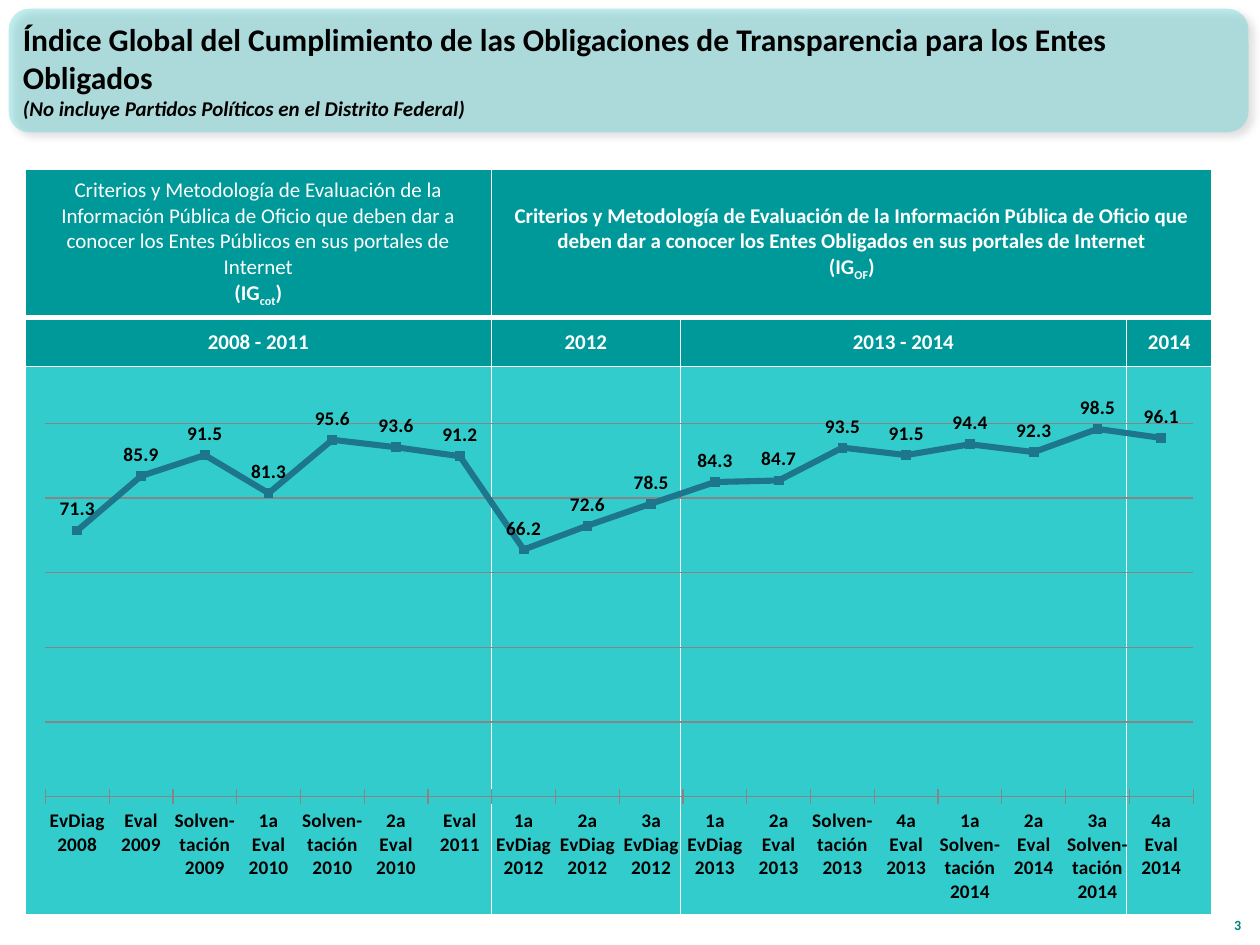
import pptx
import pptx.chart.data
import pptx.dml.color
import pptx.enum.chart
import pptx.enum.shapes
import pptx.enum.text
import pptx.oxml
import pptx.oxml.ns
import pptx.util

Pt = pptx.util.Pt
RGB = pptx.dml.color.RGBColor
Align = pptx.enum.text.PP_ALIGN
Anchor = pptx.enum.text.MSO_ANCHOR
qn = pptx.oxml.ns.qn

BLACK = RGB(0, 0, 0)
WHITE = RGB(255, 255, 255)
AQUA = RGB(0x33, 0xCC, 0xCC)
TEAL = RGB(0, 0x99, 0x99)
DEEP = RGB(0, 0x80, 0x80)
BLUE = RGB(0x1E, 0x76, 0x8C)
GRAY = RGB(0x86, 0x86, 0x86)

HEADS = [
    ("Criterios y Metodología de Evaluación de la Información Pública de Oficio "
     "que deben dar a conocer los Entes Públicos en sus portales de Internet", "cot", False),
    ("Criterios y Metodología de Evaluación de la Información Pública de Oficio "
     "que deben dar a conocer los Entes Obligados en sus portales de Internet", "OF", True),
]
SPANS = ["2008 - 2011", "2012", "2013 - 2014", "2014"]
WIDTHS = [266.4, 108, 254.9, 49]
HEIGHTS = [85, 28.1, 313.2]
SCORES = [
    ("EvDiag\n2008", 71.3), ("Eval\n2009", 85.9), ("Solven-\ntación\n2009", 91.5),
    ("1a\nEval\n2010", 81.3), ("Solven-\ntación\n2010", 95.6), ("2a\nEval\n2010", 93.6),
    ("Eval\n2011", 91.2), ("1a\nEvDiag\n2012", 66.2), ("2a\nEvDiag\n2012", 72.6),
    ("3a\nEvDiag\n2012", 78.5), ("1a\nEvDiag\n2013", 84.3), ("2a\nEval\n2013", 84.7),
    ("Solven-\ntación\n2013", 93.5), ("4a\nEval\n2013", 91.5),
    ("1a\nSolven-\ntación\n2014", 94.4), ("2a\nEval\n2014", 92.3),
    ("3a\nSolven-\ntación\n2014", 98.5), ("4a\nEval\n2014", 96.1),
]


def style(font, color, **form):
    for key, val in {"name": "Calibri", "bold": True, **form}.items():
        setattr(font, key, val)
    font.fill.solid()
    font.fill.fore_color.rgb = color


def add_run(para, text, color, **form):
    run = para.add_run()
    run.text = text
    style(run.font, color, **form)
    return run


def place(shape, left, top, width, height):
    box = {"left": left, "top": top, "width": width, "height": height}
    for key, val in box.items():
        setattr(shape, key, Pt(val))


def paint(fill, color, alpha=100):
    """Fill with a solid colour at alpha percent opacity."""
    fill.solid()
    fill.fore_color.rgb = color
    if alpha < 100:
        tint = fill._xPr.find(".//" + qn("a:srgbClr"))
        tint.append(pptx.oxml.parse_xml(
            f'<a:alpha {pptx.oxml.ns.nsdecls("a")} val="{alpha * 1000}"/>'))


def add_band(slide):
    band = slide.shapes.add_shape(
        pptx.enum.shapes.MSO_SHAPE.ROUNDED_RECTANGLE, Pt(5), Pt(5), Pt(708.5), Pt(70.6))
    paint(band.fill, AQUA, 30)
    band.line.fill.background()
    band._element.spPr.append(pptx.oxml.parse_xml(
        f'<a:effectLst {pptx.oxml.ns.nsdecls("a")}>'
        '<a:outerShdw blurRad="50800" dist="38100" dir="2700000" algn="tl" rotWithShape="0">'
        '<a:srgbClr val="000000"><a:alpha val="40000"/></a:srgbClr>'
        '</a:outerShdw></a:effectLst>'))
    slide.shapes._spTree.insert(2, band._element)


def set_title(slide):
    title = slide.shapes.title
    place(title, 5.8, 6.5, 666, 67.7)
    frame = title.text_frame
    frame.auto_size = pptx.enum.text.MSO_AUTO_SIZE.NONE
    frame.vertical_anchor = Anchor.MIDDLE
    lead, note = frame.paragraphs[0], frame.add_paragraph()
    add_run(lead, "Índice Global del Cumplimiento de las Obligaciones de "
            "Transparencia para los Entes Obligados", BLACK, size=Pt(18))
    add_run(note, "(No incluye Partidos Políticos en el Distrito Federal)",
            BLACK, size=Pt(12), italic=True)
    for para in (lead, note):
        para.alignment = Align.LEFT


def add_number(slide):
    frame = slide.shapes.add_textbox(Pt(687.6), Pt(508.3), Pt(28.8), Pt(28.8)).text_frame
    frame.word_wrap = True
    frame.vertical_anchor = Anchor.BOTTOM
    para = frame.paragraphs[0]
    para.alignment = Align.RIGHT
    add_run(para, "3", DEEP, size=Pt(8))


def edge(cell, base):
    """Draw white borders; base is the width of the bottom one."""
    props = cell._tc.get_or_add_tcPr()
    for side, width in zip("LRTB", (1, 1, 1, base)):
        props.append(pptx.oxml.parse_xml(
            f'<a:ln{side} {pptx.oxml.ns.nsdecls("a")} w="{width * 12700}">'
            f'<a:solidFill><a:srgbClr val="{WHITE}"/></a:solidFill></a:ln{side}>'))


def add_grid(slide):
    grid = slide.shapes.add_table(
        3, 4, Pt(14.4), Pt(96.5), Pt(sum(WIDTHS)), Pt(sum(HEIGHTS))).table
    for col, width in zip(grid.columns, WIDTHS):
        col.width = Pt(width)
    for i, (row, height) in enumerate(zip(grid.rows, HEIGHTS)):
        row.height = Pt(height)
        for cell in row.cells:
            edge(cell, 3 if i == 0 else 1)
            paint(cell.fill, *((AQUA, 25) if i == 2 else (TEAL,)))
            cell.vertical_anchor = Anchor.MIDDLE
            cell.text_frame.paragraphs[0].alignment = Align.CENTER
    grid.cell(0, 1).merge(grid.cell(0, 3))
    for i, (text, sub, bold) in enumerate(HEADS):
        frame = grid.cell(0, i).text_frame
        add_run(frame.paragraphs[0], text, WHITE, size=Pt(12), bold=bold)
        para = frame.add_paragraph()
        para.alignment = Align.CENTER
        add_run(para, "(IG", WHITE, size=Pt(12))
        low = add_run(para, sub, WHITE, size=Pt(12))
        low.font._element.set("baseline", "-25000")
        add_run(para, ")", WHITE, size=Pt(12))
    for i, text in enumerate(SPANS):
        add_run(grid.cell(1, i).text_frame.paragraphs[0], text, WHITE, size=Pt(12))


def set_plot(chart, **box):
    """Fix the inner plot area, in fractions of the chart."""
    area = chart._chartSpace.chart.plotArea
    for old in area.findall(qn("c:layout")):
        area.remove(old)
    modes = '<c:xMode val="edge"/><c:yMode val="edge"/>'
    sizes = "".join(f'<c:{key} val="{val}"/>' for key, val in box.items())
    area.insert(0, pptx.oxml.parse_xml(
        f'<c:layout {pptx.oxml.ns.nsdecls("c")}><c:manualLayout>'
        f'<c:layoutTarget val="inner"/>{modes}{sizes}</c:manualLayout></c:layout>'))


def add_lines(slide):
    enum = pptx.enum.chart
    data = pptx.chart.data.CategoryChartData(number_format="0.0")
    data.categories = [name for name, _ in SCORES]
    data.add_series("Series 1", [val for _, val in SCORES])
    chart = slide.shapes.add_chart(
        enum.XL_CHART_TYPE.LINE_MARKERS, Pt(14.4), Pt(218.9), Pt(680.4), Pt(300.2), data).chart
    chart.has_title = chart.has_legend = False
    style(chart.font, BLACK, size=Pt(11))
    set_plot(chart, x=0.017, y=0.077, w=0.964, h=0.711)

    axis = chart.value_axis
    form = {"minimum_scale": 0, "maximum_scale": 100, "major_unit": 20,
            "has_major_gridlines": True, "visible": False}
    for key, val in form.items():
        setattr(axis, key, val)
    base = chart.category_axis
    base.major_tick_mark = enum.XL_TICK_MARK.CROSS
    for line in (axis.major_gridlines.format.line, base.format.line):
        line.color.rgb = GRAY
        line.width = Pt(0.75)

    plot = chart.plots[0]
    plot.vary_by_categories = False
    plot.has_data_labels = True
    form = {"show_value": True, "position": enum.XL_LABEL_POSITION.ABOVE,
            "number_format": "0.0", "number_format_is_linked": False}
    for key, val in form.items():
        setattr(plot.data_labels, key, val)
    row = plot.series[0]
    row.smooth = False
    row.format.line.color.rgb = BLUE
    row.format.line.width = Pt(3.5)
    row.marker.style = enum.XL_MARKER_STYLE.SQUARE
    row.marker.size = 5
    paint(row.marker.format.fill, BLUE)
    row.marker.format.line.color.rgb = BLUE


def main():
    deck = pptx.Presentation()
    deck.slide_width, deck.slide_height = Pt(720), Pt(540)
    slide = deck.slides.add_slide(deck.slide_layouts[5])
    add_band(slide)
    set_title(slide)
    add_number(slide)
    add_grid(slide)
    add_lines(slide)
    deck.save("out.pptx")


if __name__ == "__main__":
    main()
